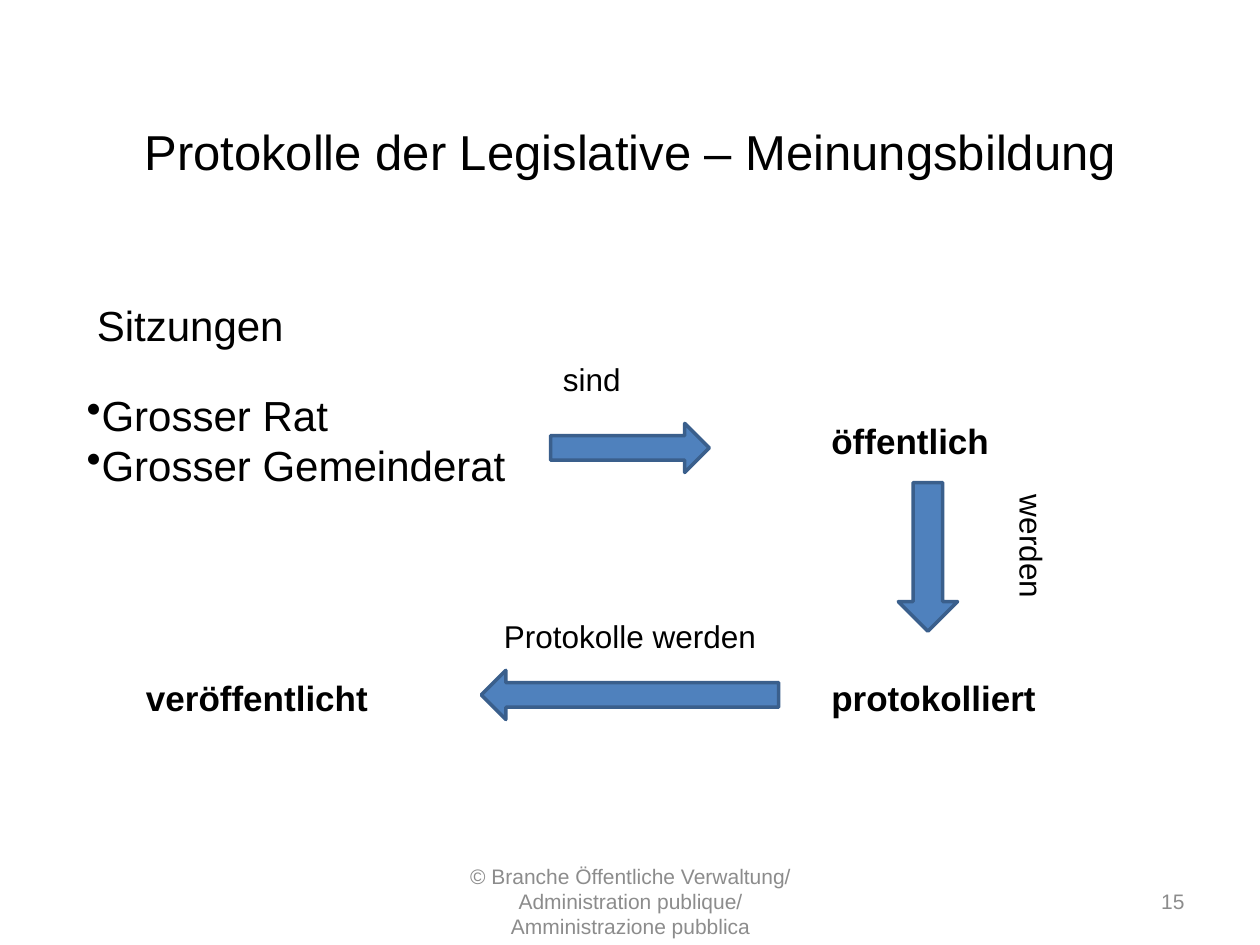
import pptx
import pptx.util
import pptx.dml.color
import pptx.enum.shapes
import pptx.enum.text
import lxml.etree
from pptx.util import Inches

BLACK = pptx.dml.color.RGBColor(0x00, 0x00, 0x00)
GREY = pptx.dml.color.RGBColor(0x8C, 0x8C, 0x8C)
BLUE = pptx.dml.color.RGBColor(0x4F, 0x81, 0xBD)
DARK_BLUE = pptx.dml.color.RGBColor(0x3A, 0x5F, 0x8C)

ALIGN = pptx.enum.text.PP_ALIGN
ANCHOR = pptx.enum.text.MSO_ANCHOR
SHAPE = pptx.enum.shapes.MSO_SHAPE

prs = pptx.Presentation()
prs.slide_width, prs.slide_height = Inches(10), Inches(7.5)
s = prs.slides.add_slide(prs.slide_layouts[6])


def add_text(text, box, size, color=BLACK, bold=False, align=ALIGN.LEFT,
             anchor=ANCHOR.TOP, wrap=False, bullet=False):
    sp = s.shapes.add_textbox(*map(Inches, box))
    tf = sp.text_frame
    tf.text = text
    tf.word_wrap = wrap
    tf.vertical_anchor = anchor
    for p in tf.paragraphs:
        if bullet:
            bu = lxml.etree.SubElement(p._p.get_or_add_pPr(),
                                       pptx.oxml.ns.qn("a:buChar"))
            bu.set("char", "•")
        p.alignment = align
        for r in p.runs:
            r.font.name = "Arial"
            r.font.size = pptx.util.Pt(size)
            r.font.bold = bold
            r.font.color.rgb = color
    return sp


# Title
add_text("Protokolle der Legislative – Meinungsbildung", (0.5, 0.84, 9, 0.71), 28,
         align=ALIGN.CENTER, anchor=ANCHOR.MIDDLE, wrap=True)

# Meetings
add_text("Sitzungen", (0.67, 2.33, 1.7, 0.5), 24)
add_text("Grosser Rat\nGrosser Gemeinderat", (0.59, 3.04, 3.56, 0.91), 24, bullet=True)

# Stations of the process
for text, left, top, width in [
    ("öffentlich", 6.5, 3.28, 1.46),
    ("protokolliert", 6.5, 5.32, 1.84),
    ("veröffentlicht", 1.06, 5.32, 1.98),
]:
    add_text(text, (left, top, width, 0.44), 20, bold=True)

# Arrows between the stations
for kind, box in [
    (SHAPE.RIGHT_ARROW, (4.37, 3.36, 1.26, 0.39)),
    (SHAPE.DOWN_ARROW, (7.13, 3.83, 0.47, 1.18)),
    (SHAPE.LEFT_ARROW, (3.82, 5.32, 2.36, 0.39)),
]:
    sp = s.shapes.add_shape(kind, *map(Inches, box))
    sp.shadow.inherit = False
    sp.fill.solid()
    sp.fill.fore_color.rgb = BLUE
    sp.line.color.rgb = DARK_BLUE
    sp.line.width = pptx.util.Pt(2)

# Arrow labels
for text, box, angle in [
    ("sind", (4.37, 2.81, 0.66, 0.4), 0),
    ("werden", (7.68, 4.14, 1.02, 0.4), 90),
    ("Protokolle werden", (3.9, 4.85, 2.22, 0.4), 0),
]:
    add_text(text, box, 18).rotation = angle

# Footer and slide number
add_text("© Branche Öffentliche Verwaltung/ Administration publique/ "
         "Amministrazione pubblica", (3.42, 6.95, 3.17, 0.4), 12, GREY,
         align=ALIGN.CENTER, anchor=ANCHOR.MIDDLE, wrap=True)
add_text("15", (7.17, 6.95, 2.33, 0.4), 12, GREY,
         align=ALIGN.RIGHT, anchor=ANCHOR.MIDDLE, wrap=True)

prs.save("out.pptx")
